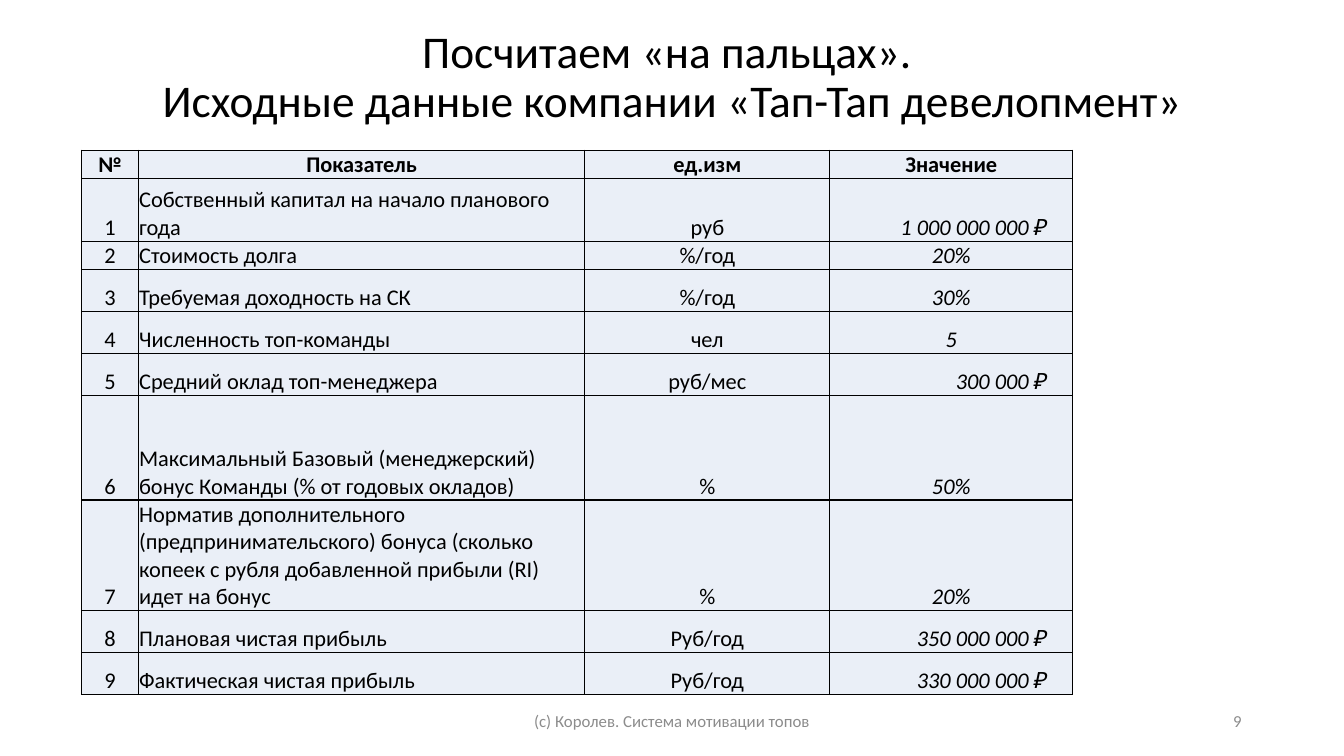
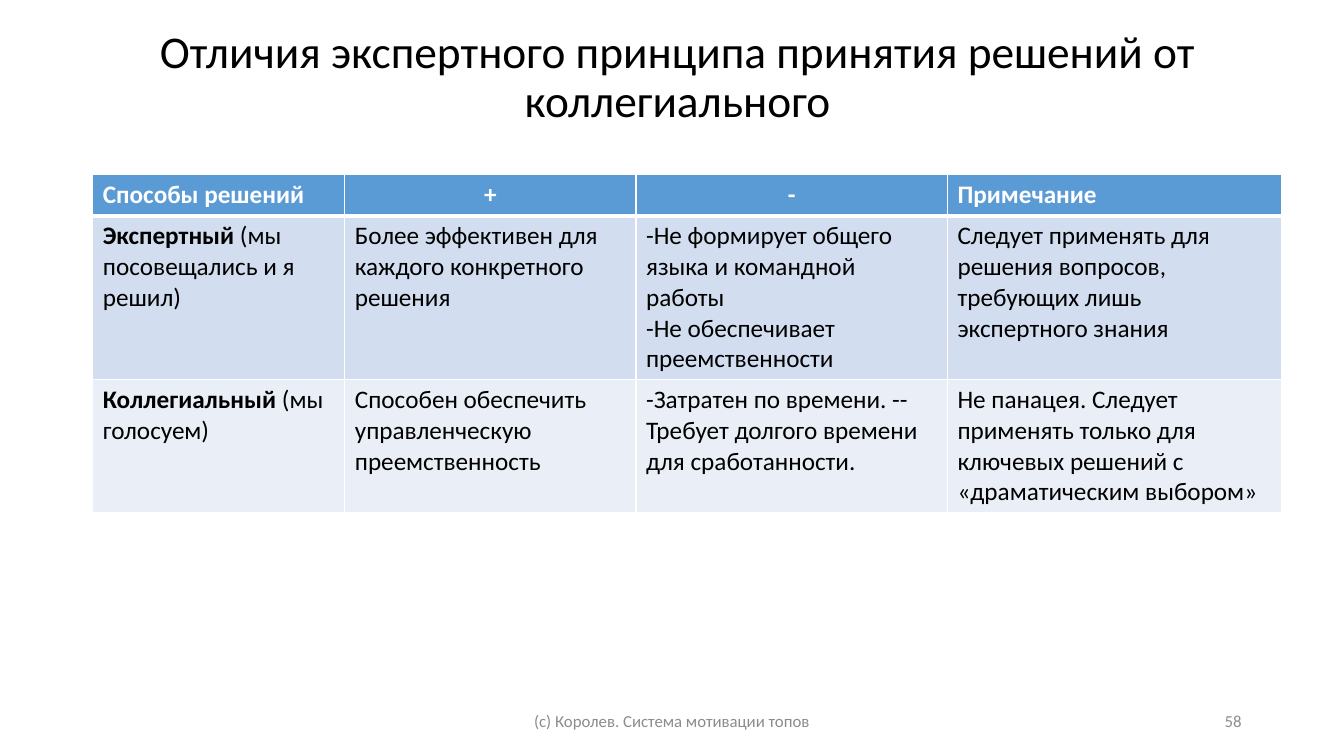
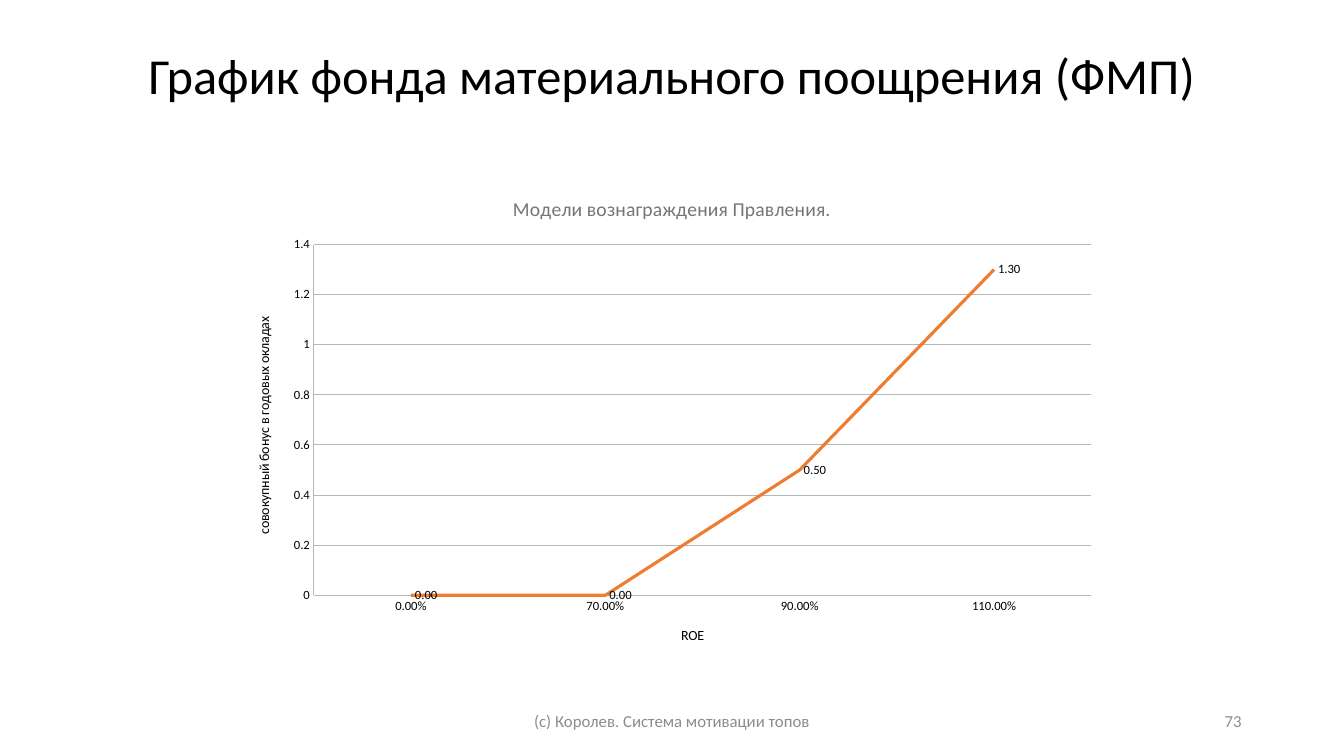
from lxml import etree
from pptx import Presentation
from pptx.chart.data import CategoryChartData
from pptx.dml.color import RGBColor
from pptx.enum.chart import XL_CHART_TYPE, XL_LABEL_POSITION, XL_MARKER_STYLE, XL_TICK_MARK
from pptx.enum.text import MSO_ANCHOR, PP_ALIGN
from pptx.oxml.ns import qn
from pptx.util import Pt

FONT = "Calibri"
BLACK = RGBColor(0x00, 0x00, 0x00)
WHITE = RGBColor(0xFF, 0xFF, 0xFF)
FOOTER_GRAY = RGBColor(0x8C, 0x8C, 0x8C)
CAPTION_GRAY = RGBColor(0x75, 0x75, 0x75)
GRID_GRAY = RGBColor(0xB7, 0xB7, 0xB7)
BLUE = RGBColor(0x5B, 0x9B, 0xD5)
BAND = RGBColor(0xD2, 0xDE, 0xEF)
PALE = RGBColor(0xEA, 0xEF, 0xF7)
ORANGE = RGBColor(0xED, 0x7D, 0x31)

LEFT, CENTER, RIGHT = PP_ALIGN.LEFT, PP_ALIGN.CENTER, PP_ALIGN.RIGHT
FOOTER = "(с) Королев. Система мотивации топов"

INDICATORS = [
    ("№", "Показатель", "ед.изм", "Значение"),
    ("1", "Собственный капитал на начало планового года", "руб", "1 000 000 000 ₽"),
    ("2", "Стоимость долга", "%/год", "20%"),
    ("3", "Требуемая доходность на СК", "%/год", "30%"),
    ("4", "Численность топ-команды", "чел", "5"),
    ("5", "Средний оклад топ-менеджера", "руб/мес", "300 000 ₽"),
    ("6", "Максимальный Базовый (менеджерский) бонус Команды (% от годовых окладов)", "%", "50%"),
    ("7", "Норматив дополнительного (предпринимательского) бонуса (сколько копеек с рубля "
          "добавленной прибыли (RI) идет на бонус", "%", "20%"),
    ("8", "Плановая чистая прибыль", "Руб/год", "350 000 000 ₽"),
    ("9", "Фактическая чистая прибыль", "Руб/год", "330 000 000 ₽"),
]

DECISIONS = [
    ("Способы решений", "+", "-", "Примечание"),
    (("Экспертный", " (мы посовещались и я решил)"),
     "Более эффективен для каждого конкретного решения",
     "-Не формирует общего языка и командной работы\n-Не обеспечивает преемственности",
     "Следует применять для решения вопросов, требующих лишь экспертного знания"),
    (("Коллегиальный", " (мы голосуем)"),
     "Способен обеспечить управленческую преемственность",
     "-Затратен по времени. --Требует долгого времени для сработанности.",
     "Не панацея. Следует применять только для ключевых решений с «драматическим выбором»"),
]


def set_font(font, size, color=BLACK, bold=False, italic=False):
    font.name = FONT
    font.size = Pt(size)
    font.color.rgb = color
    font.bold = bold
    font.italic = italic


def add_text(s, box, text, size, color=BLACK, align=CENTER, spacing=1.0):
    tf = s.shapes.add_textbox(*map(Pt, box)).text_frame
    tf.word_wrap = True
    tf.vertical_anchor = MSO_ANCHOR.MIDDLE
    p = tf.paragraphs[0]
    p.text = text
    p.alignment = align
    p.line_spacing = spacing
    for r in p.runs:
        set_font(r.font, size, color)


def add_slide(prs, title, number, size=32.4, left=66, width=828):
    s = prs.slides.add_slide(prs.slide_layouts[6])
    add_text(s, (left, 21, width, 70), title, size, spacing=0.9)
    add_text(s, (318, 500.5, 324, 28.75), FOOTER, 12, FOOTER_GRAY)
    add_text(s, (678, 500.5, 216, 28.75), str(number), 12, FOOTER_GRAY, RIGHT)
    return s


def add_table(s, left, top, widths, heights):
    shape = s.shapes.add_table(len(heights), len(widths), Pt(left), Pt(top),
                               Pt(sum(widths)), Pt(sum(heights)))
    table = shape.table
    table.first_row = table.horz_banding = False
    for column, width in zip(table.columns, widths):
        column.width = Pt(width)
    for row, height in zip(table.rows, heights):
        row.height = Pt(height)
    return table


def style_cell(cell, fill, border, top=1, bottom=1):
    tc_pr = cell._tc.get_or_add_tcPr()
    for side, width in (("L", 1), ("R", 1), ("T", top), ("B", bottom)):
        ln = etree.SubElement(tc_pr, qn(f"a:ln{side}"), w=str(Pt(width)))
        solid = etree.SubElement(ln, qn("a:solidFill"))
        etree.SubElement(solid, qn("a:srgbClr"), val=str(border))
    cell.fill.solid()
    cell.fill.fore_color.rgb = fill


def write_cell(cell, text, size, color=BLACK, align=LEFT, bold=False, italic=False):
    tf = cell.text_frame
    if isinstance(text, tuple):
        lead, rest = text
        tf.text = lead
        set_font(tf.paragraphs[0].runs[0].font, size, color, True)
        r = tf.paragraphs[0].add_run()
        r.text = rest
        set_font(r.font, size, color)
        return
    tf.text = text
    for p in tf.paragraphs:
        p.alignment = align
        for r in p.runs:
            set_font(r.font, size, color, bold, italic)


def build_indicators(prs):
    s = add_slide(prs, "Посчитаем «на пальцах». \vИсходные данные компании «Тап-Тап девелопмент»", 9)
    heights = [20, 45, 20, 30, 30, 30, 75, 79, 30, 30]
    table = add_table(s, 58.3, 107.3, [40.5, 319, 175, 173.5], heights)
    for i, row in enumerate(INDICATORS):
        for j, text in enumerate(row):
            cell = table.cell(i, j)
            money = text.endswith("₽")
            align = RIGHT if money else LEFT if i and j == 1 else CENTER
            style_cell(cell, PALE, BLACK)
            cell.vertical_anchor = MSO_ANCHOR.BOTTOM
            cell.margin_left = cell.margin_top = Pt(0.6)
            cell.margin_right = Pt(18.5 if money else 0.6)
            cell.margin_bottom = 0
            write_cell(cell, text, 16, align=align, bold=i == 0, italic=i > 0 and j == 3)


def build_decisions(prs):
    s = add_slide(prs, "Отличия экспертного принципа принятия решений от коллегиального", 58,
                  left=99, width=770)
    table = add_table(s, 66.3, 124.7, [180, 208, 222.5, 239], [29.5, 117, 95])
    for i, (row, fill) in enumerate(zip(DECISIONS, (BLUE, BAND, PALE))):
        header = i == 0
        for j, text in enumerate(row):
            cell = table.cell(i, j)
            style_cell(cell, fill, WHITE, top=3 if i == 1 else 1, bottom=3 if header else 1)
            write_cell(cell, text, 18, WHITE if header else BLACK,
                       CENTER if header and j in (1, 2) else LEFT, bold=header)


def set_title(owner, text, size, color=BLACK):
    tf = owner.text_frame
    tf.text = text
    set_font(tf.paragraphs[0].runs[0].font, size, color)


def style_axis(axis, title):
    axis.major_tick_mark = axis.minor_tick_mark = XL_TICK_MARK.NONE
    axis.format.line.color.rgb = GRID_GRAY
    set_font(axis.tick_labels.font, 9)
    set_title(axis.axis_title, title, 10)


def set_plot_layout(chart, x, y, w, h):
    area = chart.element.find(".//" + qn("c:plotArea"))
    for old in area.findall(qn("c:layout")):
        area.remove(old)
    layout = etree.Element(qn("c:layout"))
    area.insert(0, layout)
    manual = etree.SubElement(layout, qn("c:manualLayout"))
    for tag, val in (("layoutTarget", "inner"), ("xMode", "edge"), ("yMode", "edge"),
                     ("x", x), ("y", y), ("w", w), ("h", h)):
        etree.SubElement(manual, qn(f"c:{tag}"), val=str(val))


def build_bonus_chart(prs):
    s = add_slide(prs, "График фонда материального поощрения (ФМП)", 73, size=36)
    data = CategoryChartData(number_format="0.00")
    data.categories = ["0.00%", "70.00%", "90.00%", "110.00%"]
    data.add_series("Series 1", (0, 0, 0.5, 1.3))
    chart = s.shapes.add_chart(XL_CHART_TYPE.LINE, Pt(168), Pt(126), Pt(624), Pt(348), data).chart
    set_font(chart.font, 10)
    chart.has_legend = False
    chart.has_title = True
    set_title(chart.chart_title, "Модели вознаграждения Правления.", 14, CAPTION_GRAY)
    chart.chart_title.include_in_layout = False
    set_plot_layout(chart, 0.09, 0.14, 0.89, 0.72)

    style_axis(chart.category_axis, "ROE")
    axis = chart.value_axis
    style_axis(axis, "совокупный бонус в годовых окладах")
    axis.minimum_scale, axis.maximum_scale, axis.major_unit = 0, 1.4, 0.2
    axis.tick_labels.number_format = "General"
    axis.tick_labels.number_format_is_linked = False
    axis.major_gridlines.format.line.color.rgb = GRID_GRAY
    axis.major_gridlines.format.line.width = Pt(0.75)

    plot = chart.plots[0]
    plot.vary_by_categories = False
    series = plot.series[0]
    series.smooth = False
    series.marker.style = XL_MARKER_STYLE.NONE
    series.format.line.color.rgb = ORANGE
    series.format.line.width = Pt(2.25)
    labels = series.data_labels
    labels.show_value = True
    labels.number_format = "0.00"
    labels.number_format_is_linked = False
    labels.position = XL_LABEL_POSITION.RIGHT
    set_font(labels.font, 9)


def main():
    prs = Presentation()
    prs.slide_width, prs.slide_height = Pt(960), Pt(540)
    build_indicators(prs)
    build_decisions(prs)
    build_bonus_chart(prs)
    prs.save("out.pptx")


if __name__ == "__main__":
    main()
